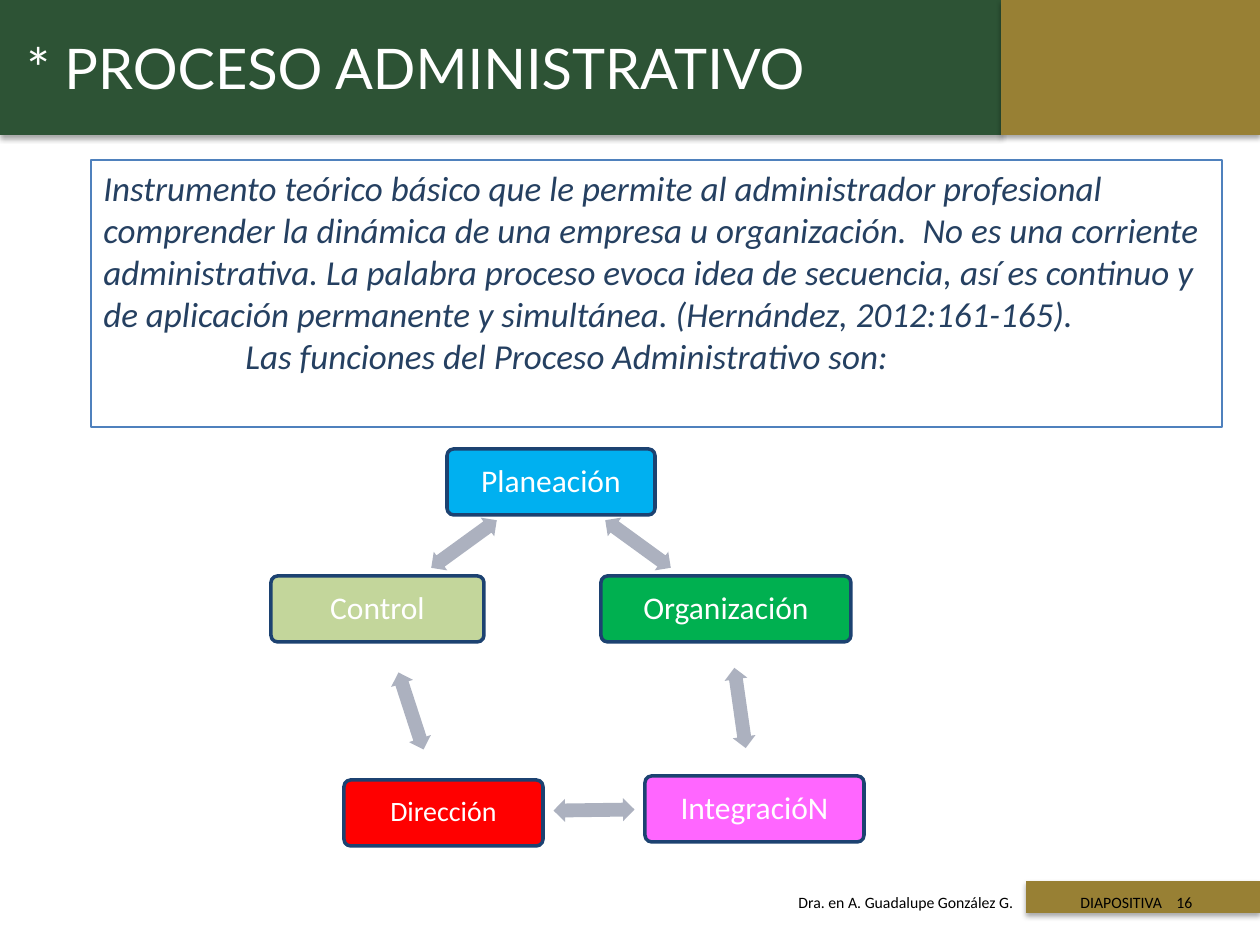
from lxml import etree
from pptx import Presentation
from pptx.dml.color import RGBColor
from pptx.enum.shapes import MSO_SHAPE
from pptx.enum.text import MSO_ANCHOR, PP_ALIGN
from pptx.oxml.ns import qn
from pptx.util import Emu, Pt

RECTANGLE = MSO_SHAPE.RECTANGLE
ROUNDED = MSO_SHAPE.ROUNDED_RECTANGLE
DOUBLE_ARROW = MSO_SHAPE.LEFT_RIGHT_ARROW
TOP, MIDDLE = MSO_ANCHOR.TOP, MSO_ANCHOR.MIDDLE
LEFT, CENTER = PP_ALIGN.LEFT, PP_ALIGN.CENTER
SCALE = 914400 / 126

GREEN, GOLD, ARROW_GRAY = "2D5335", "988034", "ACB1BF"
WHITE, BLACK, NAVY = "FFFFFF", "000000", "254061"
BOX_LINE, FRAME_LINE = "1C4271", "4F81BD"

TITLE = "* PROCESO ADMINISTRATIVO"
DEFINITION = (
    "Instrumento teórico básico que le permite al administrador profesional "
    "comprender la dinámica de una empresa u organización.  No es una corriente "
    "administrativa. La palabra proceso evoca idea de secuencia, así es continuo y "
    "de aplicación permanente y simultánea. (Hernández, 2012:161-165)."
)
FUNCTIONS_LEAD = "Las funciones del Proceso Administrativo son:"
FOOTER = "Dra. en A. Guadalupe González G.\tDIAPOSITIVA\t16"
FOOTER_TABS = [282, 378]

BANDS = [
    (1026, 881, 234, 32, GOLD),
    (0, 0, 1001, 135, GREEN),
    (1001, 0, 259, 135, GOLD),
]
BOX_HEIGHT = 66
FUNCTIONS = [
    ("Planeación", 447, 449, 208, "00B0F0", 18),
    ("Organización", 601, 576, 250, "00B050", 18),
    ("IntegracióN", 645, 776, 219, "FF66FF", 18),
    ("Dirección", 344, 780, 199, "FF0000", 16),
    ("Control", 271, 576, 213, "C3D69B", 18),
]
ARROW_WIDTH, ARROW_HEIGHT = 81, 23
ARROWS = [
    (638, 544, 36),
    (740, 708, 81.9),
    (594, 810, 179.2),
    (411, 711, 252),
    (464, 544, 324),
]


def px(value):
    return Emu(round(value * SCALE))


def color(value):
    return RGBColor.from_string(value)


def add_shape(slide, kind, left, top, width, height, fill=None, line=None, weight=1):
    shape = slide.shapes.add_shape(kind, px(left), px(top), px(width), px(height))
    shape.shadow.inherit = False
    if fill:
        shape.fill.solid()
        shape.fill.fore_color.rgb = color(fill)
    else:
        shape.fill.background()
    if line:
        shape.line.color.rgb = color(line)
        shape.line.width = Pt(weight)
    else:
        shape.line.fill.background()
    return shape


def add_shadow(shape):
    effects = shape._element.spPr.find(qn("a:effectLst"))
    shadow = etree.SubElement(
        effects, qn("a:outerShdw"), blurRad=str(Pt(3.1)), dist=str(Pt(1.8)),
        dir="5400000", rotWithShape="0")
    shade = etree.SubElement(shadow, qn("a:srgbClr"), val=BLACK)
    etree.SubElement(shade, qn("a:alpha"), val="35000")


def write(shape, lines, size, ink, font="Calibri", align=LEFT, anchor=TOP, italic=False):
    frame = shape.text_frame
    frame.word_wrap = True
    frame.vertical_anchor = anchor
    for index, line in enumerate(lines):
        paragraph = frame.add_paragraph() if index else frame.paragraphs[0]
        paragraph.alignment = align
        run = paragraph.add_run()
        run.text = line
        run.font.size = Pt(size)
        run.font.name = font
        run.font.italic = italic
        run.font.color.rgb = color(ink)
    return frame


def add_text_box(slide, left, top, width, height):
    return slide.shapes.add_textbox(px(left), px(top), px(width), px(height))


presentation = Presentation()
presentation.slide_width, presentation.slide_height = px(1260), px(945)
slide = presentation.slides.add_slide(presentation.slide_layouts[6])

for *place, fill in BANDS:
    add_shadow(add_shape(slide, RECTANGLE, *place, fill))

title = add_text_box(slide, 14, 0, 980, 135)
write(title, [TITLE], 32, WHITE, font="Lato", anchor=MIDDLE)

definition = add_shape(slide, RECTANGLE, 91, 160, 1131, 267, line=FRAME_LINE, weight=0.75)
frame = write(definition, [DEFINITION, FUNCTIONS_LEAD], 20, NAVY, italic=True)
frame.paragraphs[1]._p.get_or_add_pPr().set("marL", str(px(142)))

for name, left, top, width, fill, size in FUNCTIONS:
    box = add_shape(slide, ROUNDED, left, top, width, BOX_HEIGHT, fill, BOX_LINE, 2)
    box.adjustments[0] = 0.1
    frame = write(box, [name], size, WHITE, align=CENTER, anchor=MIDDLE)
    frame.paragraphs[0].line_spacing = 0.9

for center_x, center_y, angle in ARROWS:
    arrow = add_shape(
        slide, DOUBLE_ARROW, center_x - ARROW_WIDTH / 2, center_y - ARROW_HEIGHT / 2,
        ARROW_WIDTH, ARROW_HEIGHT, ARROW_GRAY)
    arrow.adjustments[0] = 0.6
    arrow.adjustments[1] = 0.5
    arrow.rotation = angle

footer = add_text_box(slide, 786, 887, 474, 32)
frame = write(footer, [FOOTER], 9, BLACK)
tabs = etree.SubElement(frame.paragraphs[0]._p.get_or_add_pPr(), qn("a:tabLst"))
for position in FOOTER_TABS:
    etree.SubElement(tabs, qn("a:tab"), pos=str(px(position)), algn="l")

presentation.save("out.pptx")
